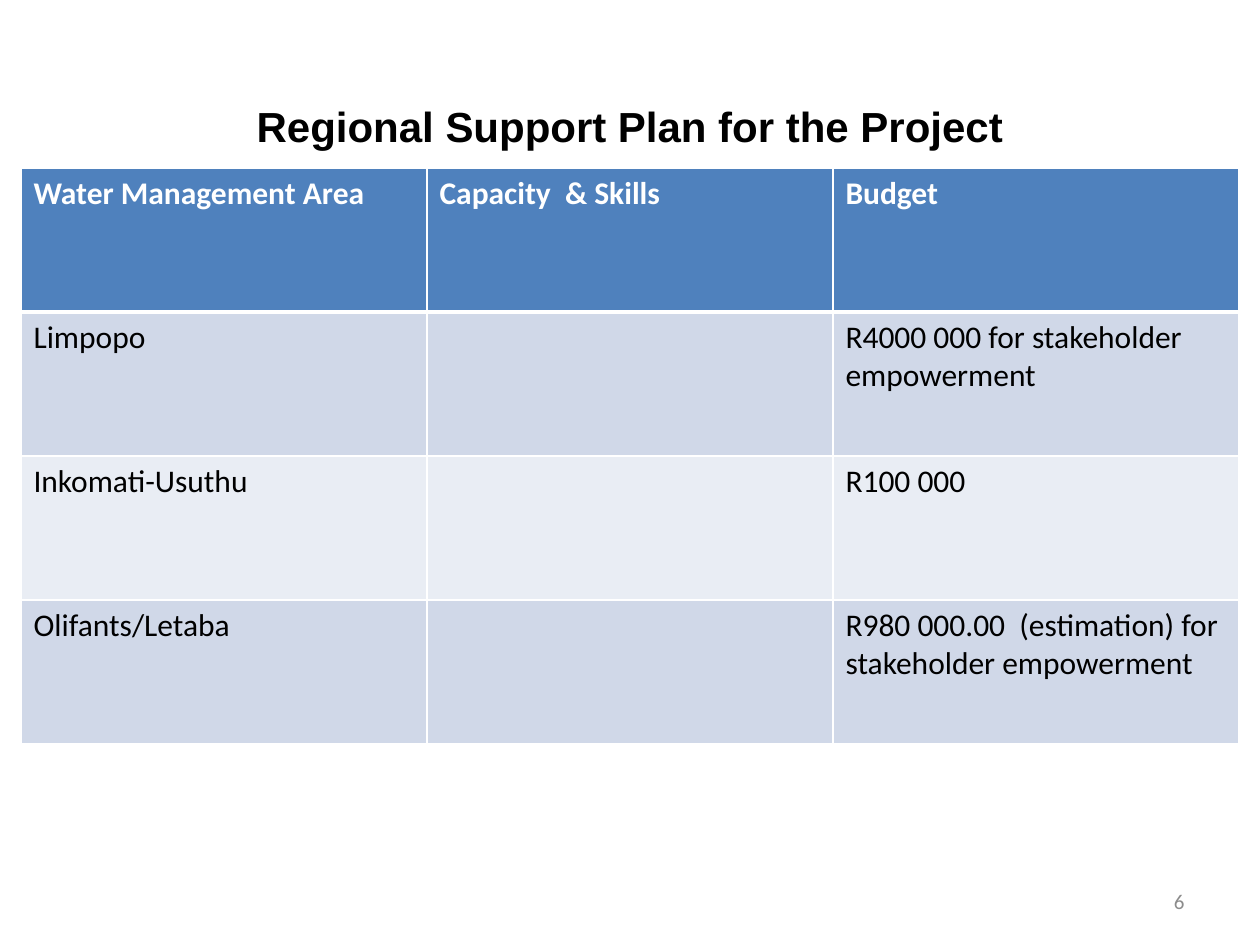
from dataclasses import dataclass

from lxml import etree
from pptx import Presentation
from pptx import util as u
from pptx.dml.color import RGBColor
from pptx.enum import text
from pptx.oxml import ns

PX = 914400 / 126


def px(length):
    return u.Emu(round(length * PX))


@dataclass(frozen=True)
class Theme:
    heading_font: str = "Arial"
    body_font: str = "Calibri"
    ink: str = "000000"
    white: str = "FFFFFF"
    muted: str = "8C8C8C"
    header_fill: str = "4F81BD"
    band_fills: tuple = ("D0D8E8", "E9EDF4")
    title_size: int = 24
    table_size: int = 18
    number_size: int = 12
    thin_line: int = 1
    thick_line: int = 3


def write(frame, content, *, font, size, color, bold=False, align=text.PP_ALIGN.LEFT):
    paragraph = frame.paragraphs[0]
    paragraph.alignment = align
    paragraph.font.size = u.Pt(size)
    if not content:
        return
    run = paragraph.add_run()
    run.text = content
    run.font.name = font
    run.font.size = u.Pt(size)
    run.font.bold = bold
    run.font.color.rgb = RGBColor.from_string(color)


class SlideBuilder:
    def __init__(self, slide, theme):
        self.slide = slide
        self.theme = theme

    def text_box(self, left, top, width, height, content, **style):
        shape = self.slide.shapes.add_textbox(px(left), px(top), px(width), px(height))
        frame = shape.text_frame
        frame.word_wrap = True
        frame.vertical_anchor = text.MSO_ANCHOR.MIDDLE
        write(frame, content, **style)

    def border(self, cell, side, width):
        properties = cell._tc.get_or_add_tcPr()
        line = etree.SubElement(properties, ns.qn(f"a:ln{side}"), w=str(u.Pt(width)))
        fill = etree.SubElement(line, ns.qn("a:solidFill"))
        etree.SubElement(fill, ns.qn("a:srgbClr"), val=self.theme.white)

    def table(self, left, top, column_width, row_height, rows):
        theme = self.theme
        column_count = len(rows[0])
        table = self.slide.shapes.add_table(
            len(rows), column_count, px(left), px(top),
            px(column_width * column_count), px(row_height * len(rows)),
        ).table
        for column in table.columns:
            column.width = px(column_width)
        for index, values in enumerate(rows):
            table.rows[index].height = px(row_height)
            header = index == 0
            fill = theme.header_fill if header else theme.band_fills[(index - 1) % 2]
            top_line = theme.thick_line if index == 1 else theme.thin_line
            bottom_line = theme.thick_line if header else theme.thin_line
            widths = {"L": theme.thin_line, "R": theme.thin_line,
                      "T": top_line, "B": bottom_line}
            for cell, value in zip(table.rows[index].cells, values):
                for side, width in widths.items():
                    self.border(cell, side, width)
                cell.fill.solid()
                cell.fill.fore_color.rgb = RGBColor.from_string(fill)
                write(cell.text_frame, value, font=theme.body_font,
                      size=theme.table_size, bold=header,
                      color=theme.white if header else theme.ink)


def main():
    presentation = Presentation()
    presentation.slide_width, presentation.slide_height = px(1260), px(945)
    theme = Theme()
    builder = SlideBuilder(
        presentation.slides.add_slide(presentation.slide_layouts[6]), theme)

    builder.text_box(63, 84, 1134, 84, "Regional Support Plan for the Project",
                     font=theme.heading_font, size=theme.title_size,
                     color=theme.ink, bold=True, align=text.PP_ALIGN.CENTER)
    builder.text_box(903, 876, 294, 50, "6",
                     font=theme.body_font, size=theme.number_size,
                     color=theme.muted, align=text.PP_ALIGN.RIGHT)
    builder.table(21, 168, 406, 144, [
        ("Water Management Area", "Capacity  & Skills", "Budget"),
        ("Limpopo", "", "R4000 000 for stakeholder empowerment"),
        ("Inkomati-Usuthu", "", "R100 000"),
        ("Olifants/Letaba", "", "R980 000.00  (estimation) for stakeholder empowerment"),
    ])
    presentation.save("out.pptx")


if __name__ == "__main__":
    main()
